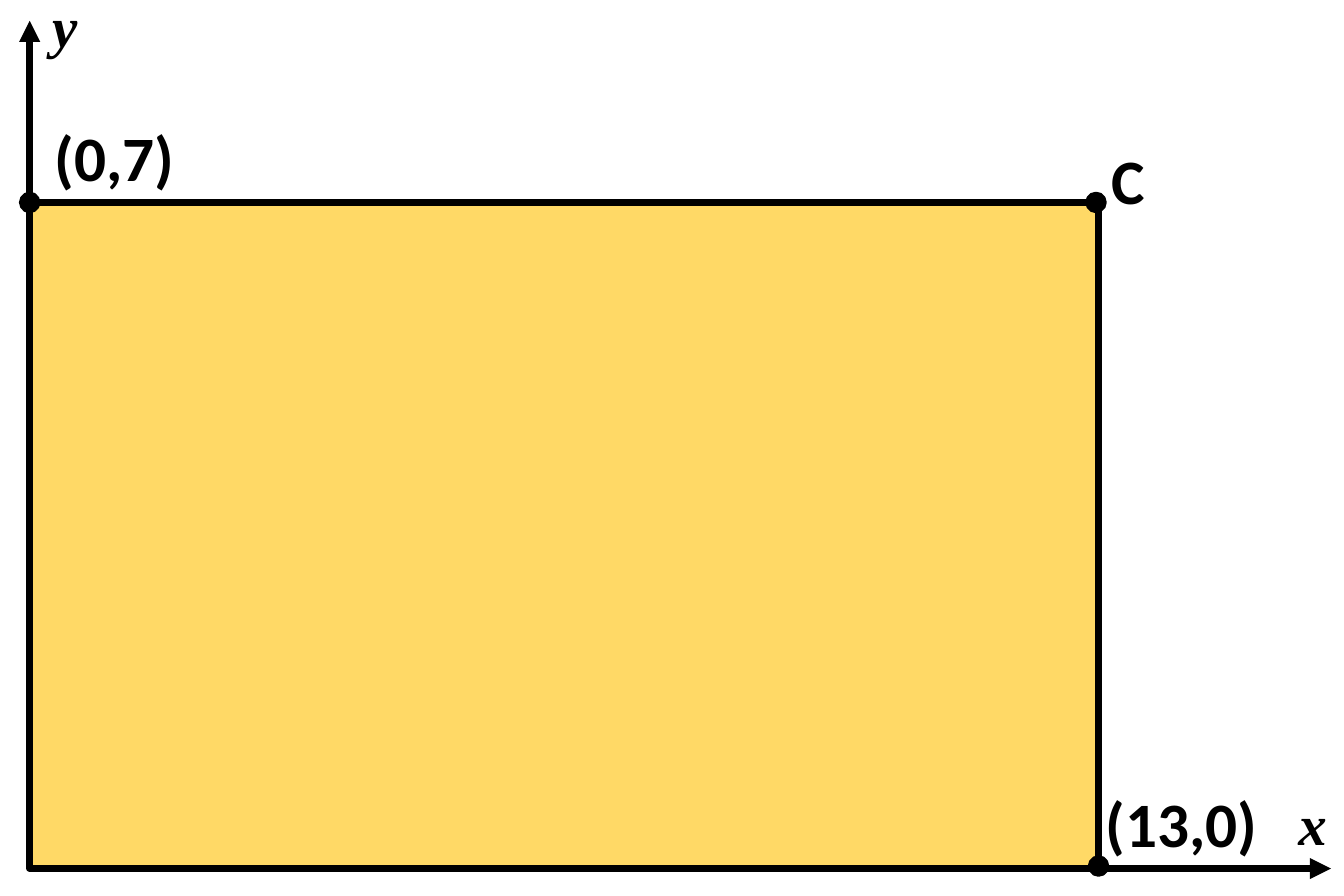
from lxml.etree import SubElement
from pptx import Presentation
from pptx.dml.color import RGBColor
from pptx.enum.shapes import MSO_CONNECTOR, MSO_SHAPE
from pptx.enum.text import MSO_AUTO_SIZE
from pptx.oxml.ns import qn
from pptx.util import Pt

BLACK = RGBColor(0x00, 0x00, 0x00)
YELLOW = RGBColor(0xFF, 0xD9, 0x66)
WHITE = RGBColor(0xFF, 0xFF, 0xFF)

LEFT, RIGHT = 9.4, 347.8
TOP, BOTTOM = 64.1, 275
DOT_SIZE = 5.8
AXIS_WIDTH = 2.25


def add_axis(page, end_x, end_y):
    """Draw an arrow from the origin of the graph."""
    axis = page.shapes.add_connector(
        MSO_CONNECTOR.STRAIGHT, Pt(LEFT), Pt(BOTTOM), Pt(end_x), Pt(end_y))
    axis.line.color.rgb = BLACK
    axis.line.width = Pt(AXIS_WIDTH)
    SubElement(axis.line._get_or_add_ln(), qn("a:tailEnd"), type="triangle")
    SubElement(axis._element.spPr, qn("a:effectLst"))


def add_figure(page, kind, left, top, width, height, fill, line_width):
    figure = page.shapes.add_shape(
        kind, Pt(left), Pt(top), Pt(width), Pt(height))
    figure.shadow.inherit = False
    figure.fill.solid()
    figure.fill.fore_color.rgb = fill
    figure.line.color.rgb = BLACK
    figure.line.width = Pt(line_width)


def add_dot(page, center_x, center_y):
    add_figure(page, MSO_SHAPE.OVAL, center_x - DOT_SIZE / 2,
               center_y - DOT_SIZE / 2, DOT_SIZE, DOT_SIZE, BLACK, 1)


def add_label(page, text, left, top, width, height, font_name, size,
              italic=False):
    box = page.shapes.add_textbox(Pt(left), Pt(top), Pt(width), Pt(height))
    frame = box.text_frame
    frame.text = text
    frame.word_wrap = False
    frame.auto_size = MSO_AUTO_SIZE.SHAPE_TO_FIT_TEXT
    font = frame.paragraphs[0].runs[0].font
    font.name = font_name
    font.size = Pt(size)
    font.bold = True
    font.italic = italic
    font.color.rgb = BLACK


def add_axis_name(page, text, left, top, width):
    add_label(page, text, left, top, width, 29.1, "Times New Roman", 18, True)


def add_point_name(page, text, left, top, width):
    add_label(page, text, left, top, width, 31.5, "Calibri", 20)


def main():
    deck = Presentation()
    deck.slide_width, deck.slide_height = Pt(425.5), Pt(283.7)
    page = deck.slides.add_slide(deck.slide_layouts[6])
    page.background.fill.solid()
    page.background.fill.fore_color.rgb = WHITE

    add_axis(page, LEFT, 6.6)
    add_axis(page, 421.4, BOTTOM)
    add_axis_name(page, "y", LEFT, -6.5, 22.3)
    add_axis_name(page, "x", 404, 246.3, 23.6)

    add_figure(page, MSO_SHAPE.RECTANGLE, LEFT, TOP, RIGHT - LEFT,
               BOTTOM - TOP, YELLOW, AXIS_WIDTH)
    for center in ((RIGHT, BOTTOM - 0.8), (LEFT, TOP), (RIGHT - 0.8, TOP)):
        add_dot(page, *center)

    add_point_name(page, "C", 344.8, 41.2, 25.2)
    add_point_name(page, "(0,7)", 10.2, 33.8, 52.6)
    add_point_name(page, "(13,0)", 343, 244.8, 63.1)

    deck.save("out.pptx")


if __name__ == "__main__":
    main()
